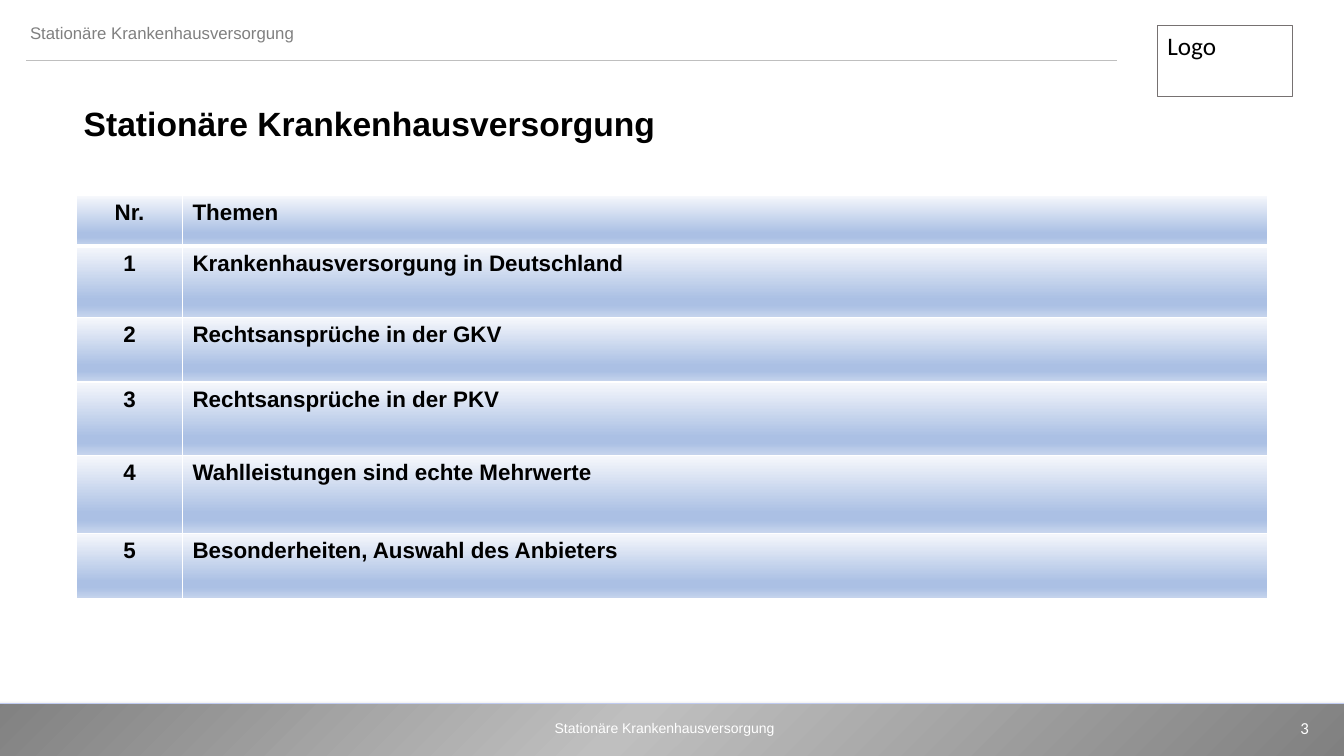
from lxml import etree
from pptx import Presentation
from pptx import util as u
from pptx.dml.color import RGBColor
from pptx.enum import shapes, text
from pptx.oxml import ns

BLACK = RGBColor(0x00, 0x00, 0x00)
WHITE = RGBColor(0xFF, 0xFF, 0xFF)
GREY = RGBColor(0x80, 0x80, 0x80)
SILVER = RGBColor(0xBF, 0xBF, 0xBF)
FRAME_GREY = RGBColor(0x76, 0x71, 0x71)
PALE_BLUE = RGBColor(0xC0, 0xCB, 0xF0)
ICE = RGBColor(0xF6, 0xF8, 0xFC)
BLUE = RGBColor(0xAB, 0xC0, 0xE4)
LIGHT_BLUE = RGBColor(0xC7, 0xD5, 0xED)

BAR_STOPS = [(0, GREY), (53, SILVER), (100, GREY)]
CELL_STOPS = [(0, ICE), (74, BLUE), (83, BLUE), (100, LIGHT_BLUE)]
LEFT, CENTER, RIGHT = text.PP_ALIGN.LEFT, text.PP_ALIGN.CENTER, text.PP_ALIGN.RIGHT
TOPIC = "Stationäre Krankenhausversorgung"


def sub(parent, tag, **attributes):
    return etree.SubElement(parent, ns.qn(tag), {k: str(v) for k, v in attributes.items()})


class Deck:
    """Places elements on a grid of 100 columns by 100 rows."""

    def __init__(self, width, height):
        self.prs = Presentation()
        self.prs.slide_width, self.prs.slide_height = u.Inches(width), u.Inches(height)
        self.slide = self.prs.slides.add_slide(self.prs.slide_layouts[5])
        self.shapes = self.slide.shapes

    def x(self, columns):
        return round(self.prs.slide_width * columns / 100)

    def y(self, rows):
        return round(self.prs.slide_height * rows / 100)

    def box(self, left, top, width, height):
        return self.x(left), self.y(top), self.x(width), self.y(height)

    def set_text(self, frame, words, align=LEFT, color=BLACK, **font):
        frame.text = words
        paragraph = frame.paragraphs[0]
        paragraph.alignment = align
        run_font = paragraph.runs[0].font
        run_font.color.rgb = color
        for key, value in {"name": "Arial", **font}.items():
            setattr(run_font, key, value)

    def frame(self, frame, **settings):
        defaults = {"word_wrap": True, "vertical_anchor": text.MSO_ANCHOR.TOP,
                    "auto_size": text.MSO_AUTO_SIZE.SHAPE_TO_FIT_TEXT}
        for key, value in {**defaults, **settings}.items():
            setattr(frame, key, value)

    def title(self, place, words, **style):
        title = self.shapes.title
        title.left, title.top, title.width, title.height = self.box(*place)
        self.set_text(title.text_frame, words, **style)
        self.frame(title.text_frame)

    def label(self, place, words, settings=None, **style):
        label = self.shapes.add_textbox(*self.box(*place))
        self.set_text(label.text_frame, words, **style)
        self.frame(label.text_frame, **(settings or {}))

    def rectangle(self, place, line_color, line_width):
        rectangle = self.shapes.add_shape(shapes.MSO_SHAPE.RECTANGLE, *self.box(*place))
        rectangle.shadow.inherit = False
        rectangle.fill.background()
        rectangle.line.color.rgb = line_color
        rectangle.line.width = u.Pt(line_width)
        return rectangle

    def gradient(self, fill, properties, stops):
        fill.gradient()
        gradient = properties.find(ns.qn("a:gradFill"))
        for child in list(gradient):
            gradient.remove(child)
        stop_list = sub(gradient, "a:gsLst")
        for position, color in stops:
            sub(sub(stop_list, "a:gs", pos=position * 1000), "a:srgbClr", val=color)
        return gradient

    def footer_bar(self, place):
        bar = self.rectangle(place, PALE_BLUE, 0.5)
        properties = bar._element.spPr
        gradient = self.gradient(bar.fill, properties, BAR_STOPS)
        sub(sub(gradient, "a:path", path="circle"), "a:fillToRect", l=100000, t=100000)
        sub(gradient, "a:tileRect", r=-100000, b=-100000)
        shadow = sub(properties.find(ns.qn("a:effectLst")), "a:outerShdw",
                     blurRad=u.Pt(4), dist=u.Pt(3), dir=45 * 60000)
        sub(sub(shadow, "a:srgbClr", val=BLACK), "a:alpha", val=40000)

    def rule(self, left, right, row, color, width):
        rule = self.shapes.add_connector(shapes.MSO_CONNECTOR.STRAIGHT, self.x(left),
                                         self.y(row), self.x(right), self.y(row))
        rule.line.color.rgb = color
        rule.line.width = u.Pt(width)
        sub(rule._element.spPr, "a:effectLst")

    def borders(self, properties, widths):
        for side, width in widths.items():
            line = sub(properties, f"a:ln{side}", w=u.Pt(width))
            sub(sub(line, "a:solidFill"), "a:srgbClr", val=WHITE)

    def table(self, left, top, columns, rows, content, **style):
        place = self.box(left, top, sum(columns), sum(rows))
        table = self.shapes.add_table(len(rows), len(columns), *place).table
        for column, width in zip(table.columns, columns):
            column.width = self.x(width)
        for row, height in zip(table.rows, rows):
            row.height = self.y(height)
        for r, entries in enumerate(content):
            for c, (words, align) in enumerate(zip(entries, (CENTER, LEFT))):
                cell = table.cell(r, c)
                self.set_text(cell.text_frame, words, align, **style)
                properties = cell._tc.get_or_add_tcPr()
                self.borders(properties, {"L": 1, "R": 1, "T": 3 if r == 1 else 1,
                                          "B": 3 if r == 0 else 1})
                gradient = self.gradient(cell.fill, properties, CELL_STOPS)
                sub(gradient, "a:lin", ang=90 * 60000, scaled=0)
                properties.append(gradient)


def main():
    deck = Deck(13.33, 7.5)

    # Running header and footer
    deck.footer_bar((-1.2, 93.07, 101.2, 7.33))
    deck.label((1.5, 2.4, 21.3, 4), TOPIC, {"word_wrap": False}, size=u.Pt(12), color=GREY)
    deck.rule(1.95, 83.12, 8, SILVER, 0.5)
    deck.label((35.26, 94.53, 28.36, 3.6), TOPIC, align=CENTER, size=u.Pt(10), color=WHITE)

    # Logo field
    logo_field = deck.rectangle((86.12, 3.33, 10.05, 9.47), FRAME_GREY, 0.75)
    deck.set_text(logo_field.text_frame, "Logo", name="Calibri", size=u.Pt(18))
    deck.frame(logo_field.text_frame, auto_size=text.MSO_AUTO_SIZE.NONE)

    # Page number
    deck.label((74.12, 92.67, 24, 7.33), "3",
               {"vertical_anchor": text.MSO_ANCHOR.MIDDLE, "auto_size": text.MSO_AUTO_SIZE.NONE},
               align=RIGHT, name="Calibri", size=u.Pt(12), color=WHITE)

    # Agenda
    topics = ["Krankenhausversorgung in Deutschland", "Rechtsansprüche in der GKV",
              "Rechtsansprüche in der PKV", "Wahlleistungen sind echte Mehrwerte",
              "Besonderheiten, Auswahl des Anbieters"]
    agenda = [("Nr.", "Themen")] + [(str(n), topic) for n, topic in enumerate(topics, 1)]
    deck.table(5.7, 25.87, [7.88, 80.72], [6.67, 9.47, 8.53, 9.73, 10.27, 8.67],
               agenda, size=u.Pt(16), bold=True)

    # Title
    deck.title((5.48, 12.93, 66.09, 6.67), TOPIC, size=u.Pt(24), bold=True)

    deck.prs.save("out.pptx")


if __name__ == "__main__":
    main()
